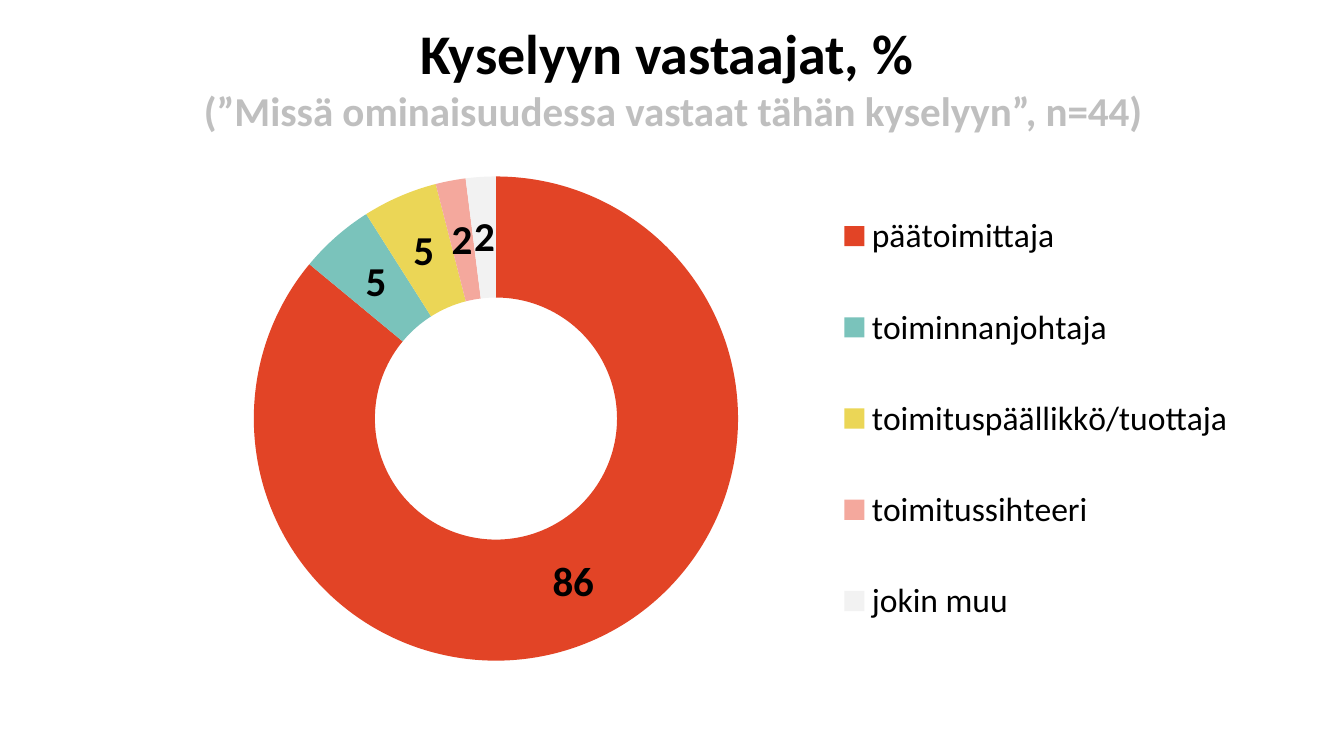
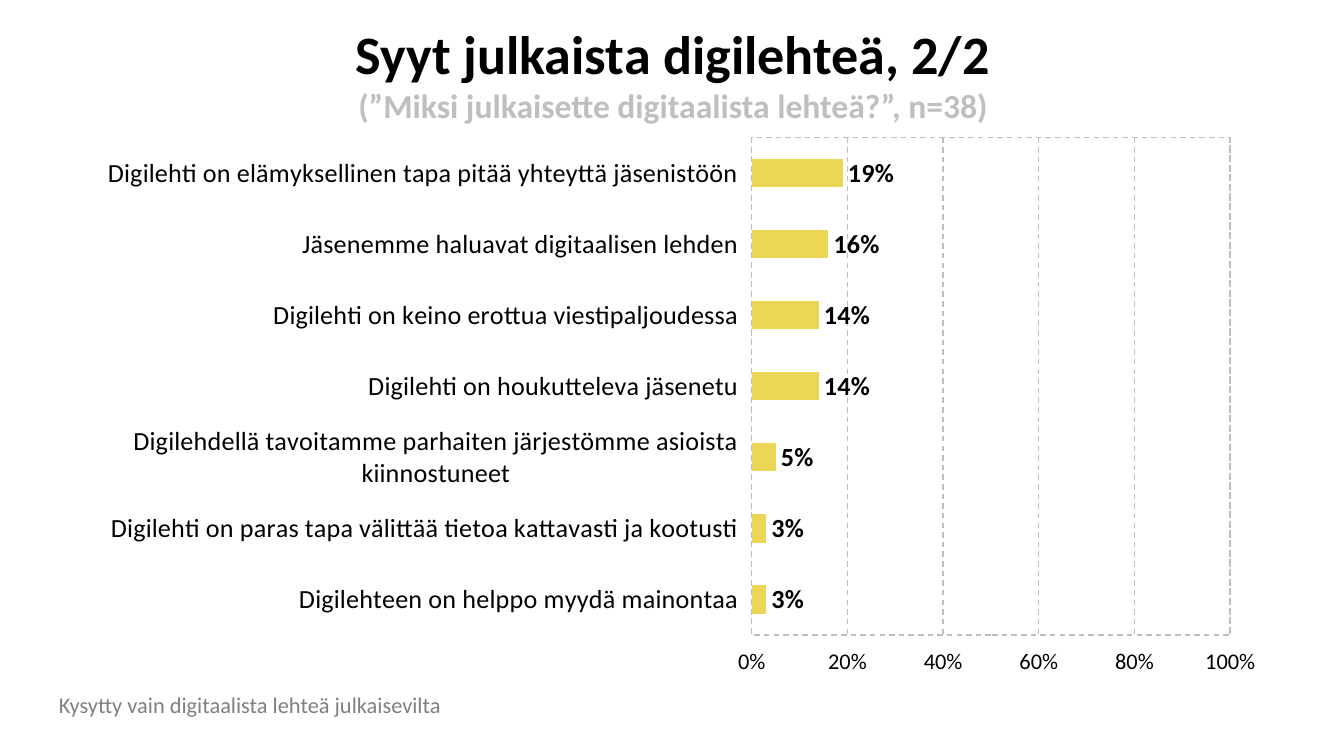
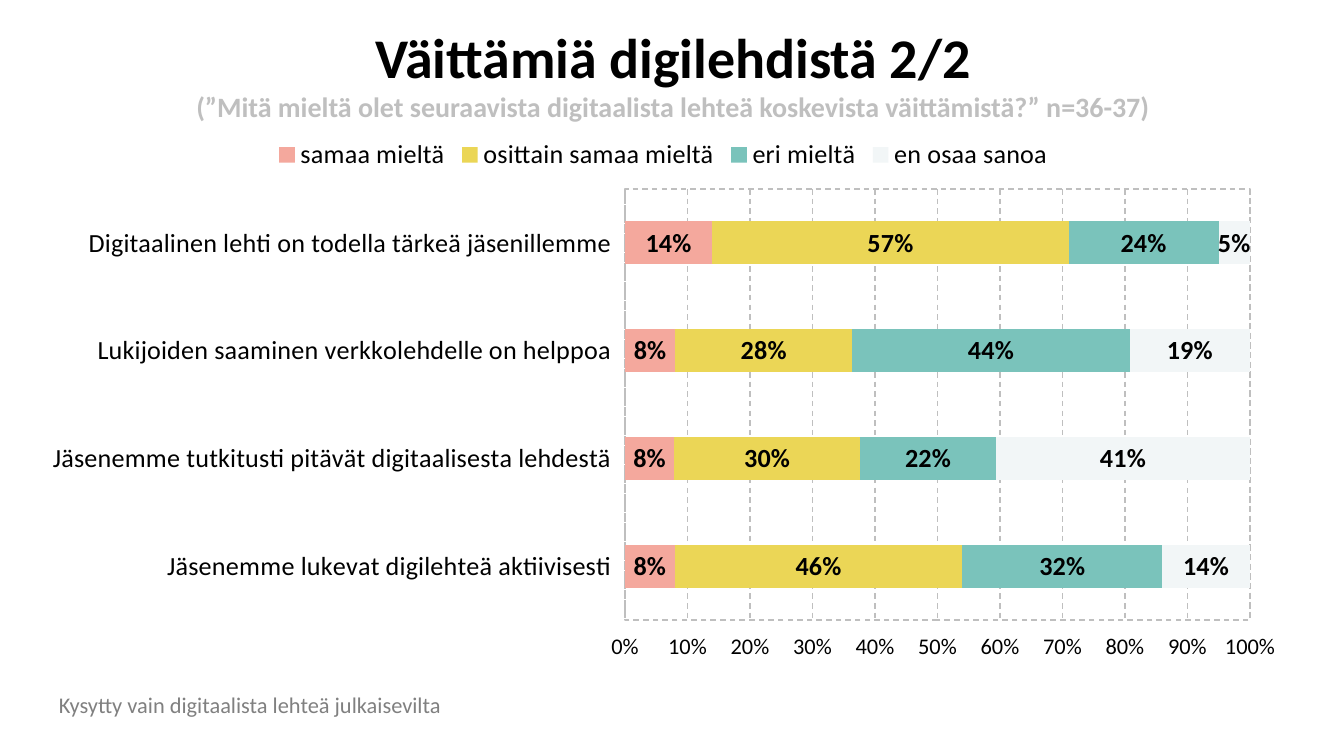
"""Build three survey result slides with native charts."""
from dataclasses import dataclass
from typing import Any

from lxml.etree import SubElement as Sub
from pptx import Presentation
from pptx.chart.data import CategoryChartData as Data
from pptx.dml.color import RGBColor as Rgb
from pptx.enum.chart import XL_CHART_TYPE as Kind
from pptx.enum.chart import XL_LABEL_POSITION as Spot
from pptx.enum.chart import XL_LEGEND_POSITION as Side
from pptx.enum.chart import XL_TICK_LABEL_POSITION as Place
from pptx.enum.chart import XL_TICK_MARK as Tick
from pptx.enum.dml import MSO_LINE as Dash
from pptx.enum.shapes import MSO_SHAPE as Form
from pptx.enum.text import MSO_ANCHOR as Anchor
from pptx.enum.text import MSO_AUTO_SIZE as Fit
from pptx.enum.text import PP_ALIGN as Align
from pptx.oxml.ns import qn
from pptx.util import Inches, Pt

FONT = "Calibri"
HUES = {
    "white": "FFFFFF", "black": "000000", "light": "BFBFBF", "gray": "808080",
    "red": "E24426", "teal": "7AC3BB", "gold": "EBD656", "pink": "F4A89D",
    "pale": "F2F2F2", "ice": "F2F6F7",
}
NOTE = "Kysytty vain digitaalista lehteä julkaisevilta"


@dataclass(frozen=True)
class Box:
    """Left, top, width and height."""
    x: float
    y: float
    w: float
    h: float

    def lengths(self) -> tuple:
        """Give the four sides in slide units."""
        return tuple(Inches(n) for n in (self.x, self.y, self.w, self.h))


@dataclass(frozen=True)
class Head:
    """Title and question line of a slide."""
    title: str
    query: str
    big: int
    small: int
    high: float = 1.08


@dataclass(frozen=True)
class Row:
    """One chart series with its colour."""
    name: str
    vals: tuple
    hue: str


@dataclass(frozen=True)
class Bars:
    """A bar chart with its place, plot area and axis step."""
    kind: Any
    box: Box
    plot: Box
    step: float
    cats: tuple
    rows: tuple


HEADS = (
    Head("Kyselyyn vastaajat, % ",
         "(”Missä ominaisuudessa vastaat tähän kyselyyn”, n=44)", 30, 22, 1.14),
    Head("Syyt julkaista digilehteä, 2/2",
         "(”Miksi julkaisette digitaalista lehteä?”, n=38)", 29, 18),
    Head("Väittämiä digilehdistä 2/2",
         "(”Mitä mieltä olet seuraavista digitaalista lehteä koskevista "
         "väittämistä?” n=36-37)", 30, 15),
)
ROLES = (
    ("päätoimittaja", 86, "red"),
    ("toiminnanjohtaja", 5, "teal"),
    ("toimituspäällikkö/tuottaja", 5, "gold"),
    ("toimitussihteeri", 2, "pink"),
    ("jokin muu", 2, "pale"),
)
CAUSES = Bars(
    Kind.BAR_CLUSTERED, Box(0.61, 0.94, 8.9, 4.16), Box(0.56, 0.02, 0.4, 0.89), 0.2,
    ("Digilehteen on helppo myydä mainontaa",
     "Digilehti on paras tapa välittää tietoa kattavasti ja kootusti",
     "Digilehdellä tavoitamme parhaiten järjestömme asioista kiinnostuneet",
     "Digilehti on houkutteleva jäsenetu",
     "Digilehti on keino erottua viestipaljoudessa",
     "Jäsenemme haluavat digitaalisen lehden",
     "Digilehti on elämyksellinen tapa pitää yhteyttä jäsenistöön"),
    (Row("Series 1", (0.03, 0.03, 0.05, 0.14, 0.14, 0.16, 0.19), "gold"),),
)
CLAIMS = Bars(
    Kind.BAR_STACKED_100, Box(0.19, 0.92, 9.49, 4.06), Box(0.47, 0.12, 0.49, 0.79), 0.1,
    ("Jäsenemme lukevat digilehteä aktiivisesti",
     "Jäsenemme tutkitusti pitävät digitaalisesta lehdestä",
     "Lukijoiden saaminen verkkolehdelle on helppoa",
     "Digitaalinen lehti on todella tärkeä jäsenillemme"),
    (Row("samaa mieltä", (0.08, 0.08, 0.08, 0.14), "pink"),
     Row("osittain samaa mieltä", (0.46, 0.3, 0.28, 0.57), "gold"),
     Row("eri mieltä", (0.32, 0.22, 0.44, 0.24), "teal"),
     Row("en osaa sanoa", (0.14, 0.41, 0.19, 0.05), "ice")),
)


def tint(name: str) -> Rgb:
    """Look up a colour."""
    return Rgb.from_string(HUES[name])


def style(font: Any, size: float, hue: str = "black", bold: bool = False) -> None:
    """Set the face, size, colour and weight of a font."""
    font.name, font.size, font.bold = FONT, Pt(size), bold
    font.color.rgb = tint(hue)


def write(para: Any, text: str, **form: Any) -> None:
    """Add a run of text in the given format."""
    run = para.add_run()
    run.text = text
    style(run.font, **form)


def add_head(slide: Any, head: Head) -> None:
    """Draw the title band."""
    band = slide.shapes.add_shape(
        Form.RECTANGLE, *Box(0.34, 0, 9.34, head.high).lengths())
    band.shadow.inherit = False
    band.fill.solid()
    band.fill.fore_color.rgb = tint("white")
    Sub(band.fill._xPr.find(".//" + qn("a:srgbClr")), qn("a:alpha"), val="93000")
    band.line.fill.background()
    frame = band.text_frame
    frame.word_wrap, frame.vertical_anchor = True, Anchor.MIDDLE
    para = frame.paragraphs[0]
    para.alignment = Align.CENTER
    write(para, head.title, size=head.big, bold=True)
    para.add_line_break()
    write(para, head.query, size=head.small, hue="light", bold=True)


def add_note(slide: Any) -> None:
    """Draw the footnote."""
    frame = slide.shapes.add_textbox(*Box(0.34, 5.09, 5.9, 0.3).lengths()).text_frame
    frame.word_wrap, frame.auto_size = True, Fit.SHAPE_TO_FIT_TEXT
    write(frame.paragraphs[0], NOTE, size=12, hue="gray")


def find_part(chart: Any, name: str) -> Any:
    """Find a chart element by name."""
    return chart._chartSpace.find(".//" + qn(f"c:{name}"))


def set_place(host: Any, box: Box, index: int, inner: bool = False) -> None:
    """Fix the place of a plot area or legend as parts of the chart."""
    for old in host.findall(qn("c:layout")):
        host.remove(old)
    outer = host.makeelement(qn("c:layout"), {})
    host.insert(index, outer)
    node = Sub(outer, qn("c:manualLayout"))
    if inner:
        Sub(node, qn("c:layoutTarget"), val="inner")
    for axis in "xy":
        Sub(node, qn(f"c:{axis}Mode"), val="edge")
    for side in "xywh":
        Sub(node, qn(f"c:{side}"), val=str(getattr(box, side)))


def add_graph(slide: Any, kind: Any, box: Box, plot: Box, cats: tuple, rows: tuple) -> Any:
    """Add a chart with its data, font and plot place."""
    data = Data()
    data.categories = cats
    for row in rows:
        data.add_series(row.name, row.vals)
    chart = slide.shapes.add_chart(kind, *box.lengths(), data).chart
    chart.has_title = chart.has_legend = False
    style(chart.font, 18, "red")
    set_place(find_part(chart, "plotArea"), plot, 0, True)
    return chart


def add_key(chart: Any, side: Any, size: float) -> None:
    """Show the legend."""
    chart.has_legend = True
    chart.legend.position = side
    chart.legend.include_in_layout = False
    style(chart.legend.font, size)


def set_labels(owner: Any, size: float, form: str) -> Any:
    """Show bold values on the data."""
    labels = owner.data_labels
    labels.show_value, labels.show_percentage = True, False
    labels.number_format, labels.number_format_is_linked = form, False
    style(labels.font, size, bold=True)
    return labels


def set_axis(axis: Any, size: float, tick: Any) -> None:
    """Give an axis its text and marks, with no line."""
    axis.major_tick_mark, axis.minor_tick_mark = tick, Tick.NONE
    axis.format.line.fill.background()
    style(axis.tick_labels.font, size)


def add_ring(slide: Any) -> None:
    """Draw the doughnut of roles."""
    cats, vals, hues = zip(*ROLES)
    chart = add_graph(slide, Kind.DOUGHNUT, Box(0.52, 1.02, 8.93, 4.19),
                      Box(0.13, 0.07, 0.45, 0.86), cats, (Row("Series 1", vals, "red"),))
    add_key(chart, Side.RIGHT, 18)
    set_place(find_part(chart, "legend"), Box(0.63, 0.05, 0.35, 0.9), 1)
    series = chart.plots[0].series[0]
    for index, hue in enumerate(hues):
        fill = series.points[index].format.fill
        fill.solid()
        fill.fore_color.rgb = tint(hue)
    set_labels(series, 22, "0")


def add_bars(slide: Any, bars: Bars) -> None:
    """Draw a bar chart in percent."""
    chart = add_graph(slide, bars.kind, bars.box, bars.plot, bars.cats, bars.rows)
    stacked = bars.kind == Kind.BAR_STACKED_100
    if stacked:
        add_key(chart, Side.TOP, 14)
    plot = chart.plots[0]
    plot.gap_width, plot.vary_by_categories = 150, False
    plot.overlap = 100 if stacked else 0
    for series, row in zip(plot.series, bars.rows):
        series.format.fill.solid()
        series.format.fill.fore_color.rgb = tint(row.hue)
        labels = set_labels(series, 14, "0%")
        labels.position = Spot.CENTER if stacked else Spot.OUTSIDE_END
    set_axis(chart.category_axis, 14, Tick.NONE)
    chart.category_axis.tick_label_position = Place.LOW
    scale = chart.value_axis
    set_axis(scale, 12, Tick.OUTSIDE)
    scale.minimum_scale, scale.maximum_scale, scale.major_unit = 0, 1, bars.step
    scale.tick_labels.number_format = "0%"
    scale.tick_labels.number_format_is_linked = False
    line = scale.major_gridlines.format.line
    line.color.rgb, line.width, line.dash_style = tint("light"), Pt(0.75), Dash.DASH
    add_edge(find_part(chart, "plotArea"))


def add_edge(area: Any) -> None:
    """Put a dashed edge round the plot area."""
    line = Sub(Sub(area, qn("c:spPr")), qn("a:ln"), w=str(Pt(0.75)))
    Sub(Sub(line, qn("a:solidFill")), qn("a:srgbClr"), val=HUES["light"])
    Sub(line, qn("a:prstDash"), val="dash")


def main() -> None:
    """Build and save the slides."""
    deck = Presentation()
    deck.slide_width, deck.slide_height = Inches(10), Inches(10 * 9 / 16)
    roles, causes, claims = (
        deck.slides.add_slide(deck.slide_layouts[6]) for _ in HEADS)
    add_head(roles, HEADS[0])
    add_ring(roles)
    add_head(causes, HEADS[1])
    add_bars(causes, CAUSES)
    add_note(causes)
    add_bars(claims, CLAIMS)
    add_head(claims, HEADS[2])
    add_note(claims)
    deck.save("out.pptx")


if __name__ == "__main__":
    main()
